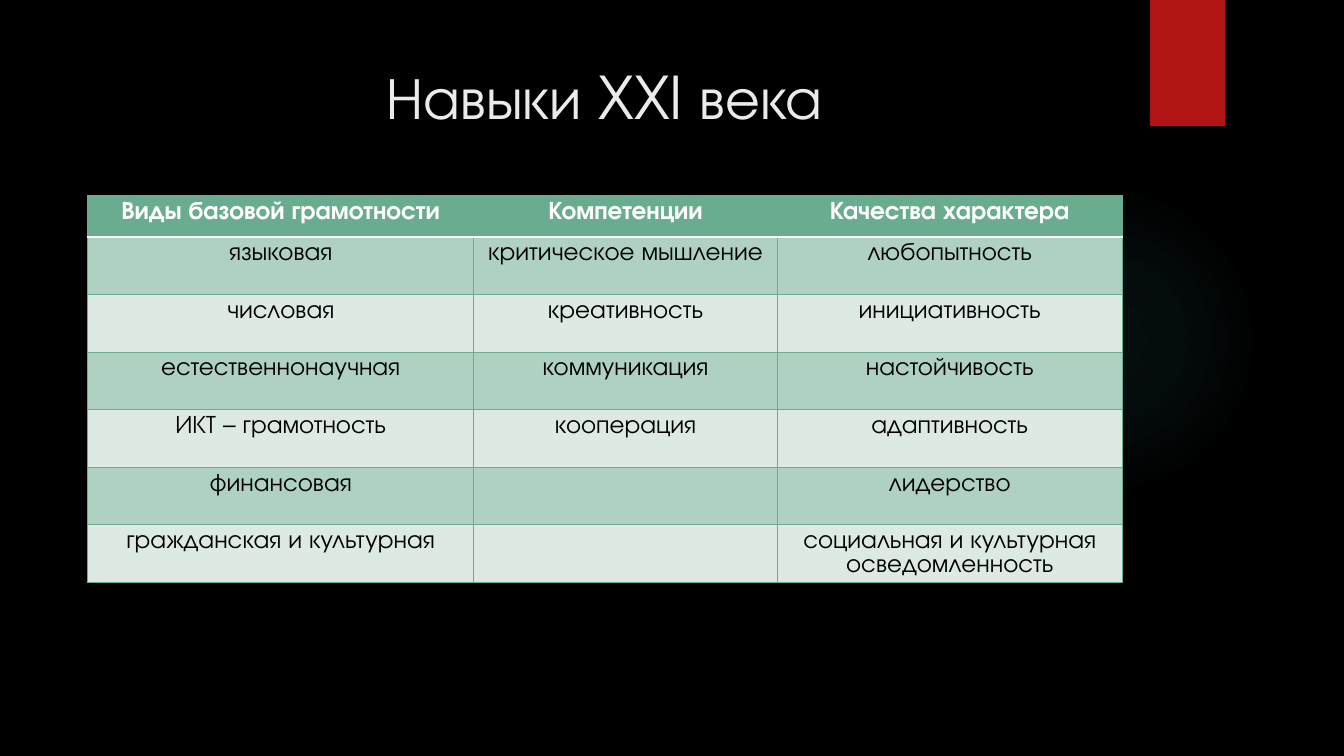
from lxml import etree
from pptx import Presentation
from pptx import oxml
from pptx import util as u
from pptx.dml.color import RGBColor
from pptx.enum import shapes, text
from pptx.oxml import ns

FONT = "TeX Gyre Adventor"
BLACK = RGBColor(0x00, 0x00, 0x00)
WHITE = RGBColor(0xFF, 0xFF, 0xFF)
TITLE_GREY = RGBColor(0xEB, 0xEB, 0xEB)
RED = RGBColor(0xB0, 0x15, 0x13)
TEAL = RGBColor(0x50, 0xB9, 0xC1)
GREEN = RGBColor(0x6A, 0xAC, 0x90)
BAND_DARK = RGBColor(0xAE, 0xD1, 0xC1)
BAND_LIGHT = RGBColor(0xDD, 0xEA, 0xE3)

COLUMN_WIDTHS = (9.73, 7.65, 8.69)
HEADER_HEIGHT, ROW_HEIGHT = 1.04, 1.45
SKILLS = [
    ("Виды базовой грамотности", "Компетенции", "Качества характера"),
    ("языковая", "критическое мышление", "любопытность"),
    ("числовая", "креативность", "инициативность"),
    ("естественнонаучная", "коммуникация", "настойчивость"),
    ("ИКТ – грамотность", "кооперация", "адаптивность"),
    ("финансовая", "", "лидерство"),
    ("гражданская и культурная", "", "социальная и культурная осведомленность"),
]


def add_plain_shape(slide, kind, left, top, width, height, color):
    shape = slide.shapes.add_shape(kind, u.Cm(left), u.Cm(top), u.Cm(width), u.Cm(height))
    shape.shadow.inherit = False
    shape.line.fill.background()
    shape.fill.solid()
    shape.fill.fore_color.rgb = color
    return shape


def fade_to_edge(shape, color, stops):
    """Replace the solid fill by a circular gradient of (position, opacity) percentages."""
    stop_xml = "".join(
        f'<a:gs pos="{position * 1000}"><a:srgbClr val="{color}">'
        f'<a:alpha val="{opacity * 1000}"/></a:srgbClr></a:gs>'
        for position, opacity in stops
    )
    gradient = oxml.parse_xml(
        f'<a:gradFill {ns.nsdecls("a")}><a:gsLst>{stop_xml}</a:gsLst><a:path path="circle">'
        '<a:fillToRect l="50000" t="50000" r="50000" b="50000"/></a:path></a:gradFill>'
    )
    properties = shape._element.spPr
    properties.replace(properties.find(ns.qn("a:solidFill")), gradient)


def format_paragraph(paragraph, size, color, bold=False):
    paragraph.alignment = text.PP_ALIGN.CENTER
    for run in paragraph.runs:
        run.font.name = FONT
        run.font.size = u.Pt(size)
        run.font.bold = bold
        run.font.color.rgb = color


def set_border(cell, side, color, width):
    line = etree.SubElement(cell._tc.get_or_add_tcPr(), ns.qn(f"a:ln{side}"), w=str(u.Pt(width)))
    fill = etree.SubElement(line, ns.qn("a:solidFill"))
    etree.SubElement(fill, ns.qn("a:srgbClr"), val=str(color))


def format_cell(cell, row):
    header = row == 0
    for side in "LRTB":
        below_header = (side == "B" and header) or (side == "T" and row == 1)
        color, width = (WHITE, 1.5) if below_header else (GREEN, 0.75)
        set_border(cell, side, color, width)
    cell.fill.solid()
    cell.fill.fore_color.rgb = GREEN if header else BAND_DARK if row % 2 else BAND_LIGHT
    paragraph = cell.text_frame.paragraphs[0]
    paragraph.line_spacing = u.Pt(17)
    format_paragraph(paragraph, 18, WHITE if header else BLACK, header)


def add_skills_table(slide, left, top):
    height = HEADER_HEIGHT + ROW_HEIGHT * (len(SKILLS) - 1)
    table = slide.shapes.add_table(
        len(SKILLS), len(COLUMN_WIDTHS),
        u.Cm(left), u.Cm(top), u.Cm(sum(COLUMN_WIDTHS)), u.Cm(height),
    ).table
    for column, width in zip(table.columns, COLUMN_WIDTHS):
        column.width = u.Cm(width)
    for row, words in enumerate(SKILLS):
        table.rows[row].height = u.Cm(ROW_HEIGHT if row else HEADER_HEIGHT)
        for column, word in enumerate(words):
            cell = table.cell(row, column)
            cell.text_frame.text = word
            format_cell(cell, row)


def set_title(slide, words):
    title = slide.shapes.title
    title.left, title.top, title.width, title.height = map(u.Cm, (2.57, 1.4, 25.35, 2.92))
    title.text_frame.text = words
    title.text_frame.vertical_anchor = text.MSO_ANCHOR.TOP
    format_paragraph(title.text_frame.paragraphs[0], 42, TITLE_GREY)


def main():
    presentation = Presentation()
    presentation.slide_width, presentation.slide_height = u.Cm(33.87), u.Cm(19.05)
    slide = presentation.slides.add_slide(presentation.slide_layouts[5])

    # Background and decoration
    slide.background.fill.solid()
    slide.background.fill.fore_color.rgb = BLACK
    glow = add_plain_shape(slide, shapes.MSO_SHAPE.OVAL, 23.9, 4.65, 7.82, 7.82, TEAL)
    fade_to_edge(glow, TEAL, [(0, 7), (36, 6), (69, 0), (100, 0)])
    add_plain_shape(slide, shapes.MSO_SHAPE.RECTANGLE, 28.98, 0, 1.9, 3.18, RED)

    # Title and table
    set_title(slide, "Навыки XXI века")
    add_skills_table(slide, 2.21, 4.93)

    presentation.save("out.pptx")


if __name__ == "__main__":
    main()
